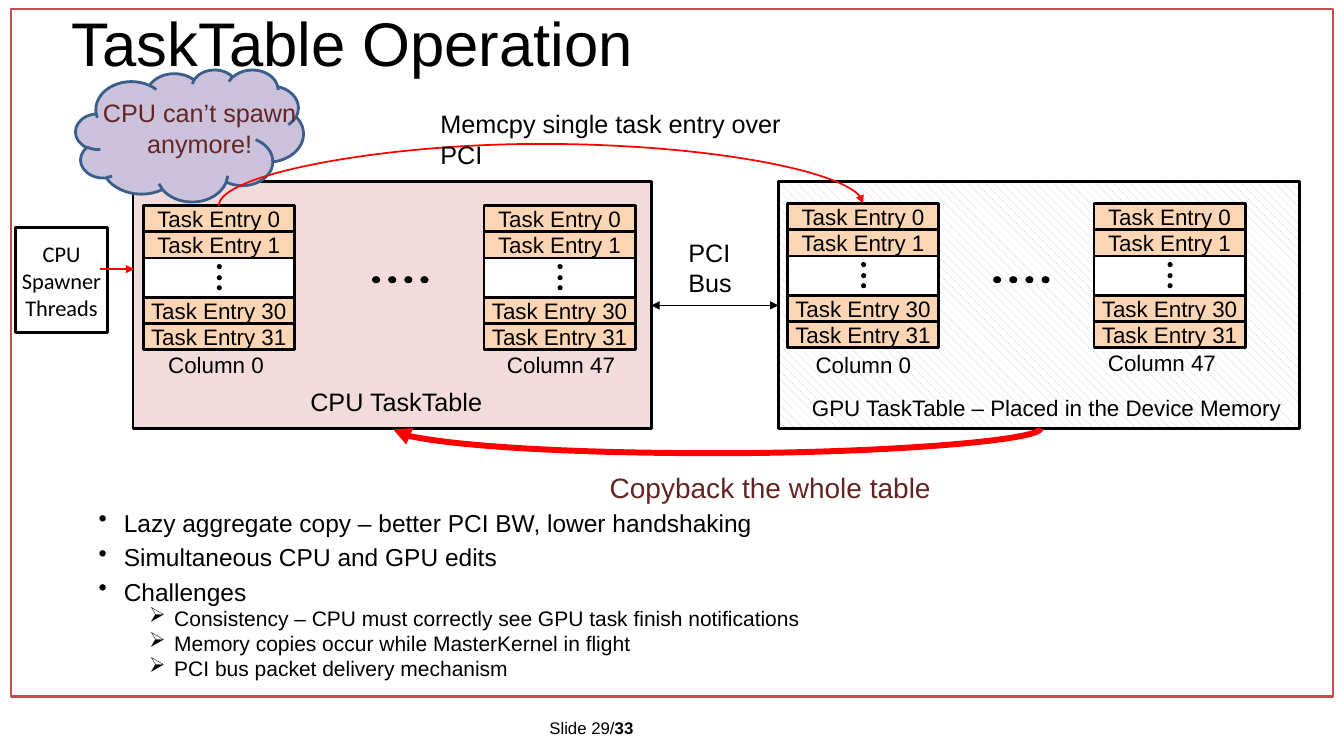
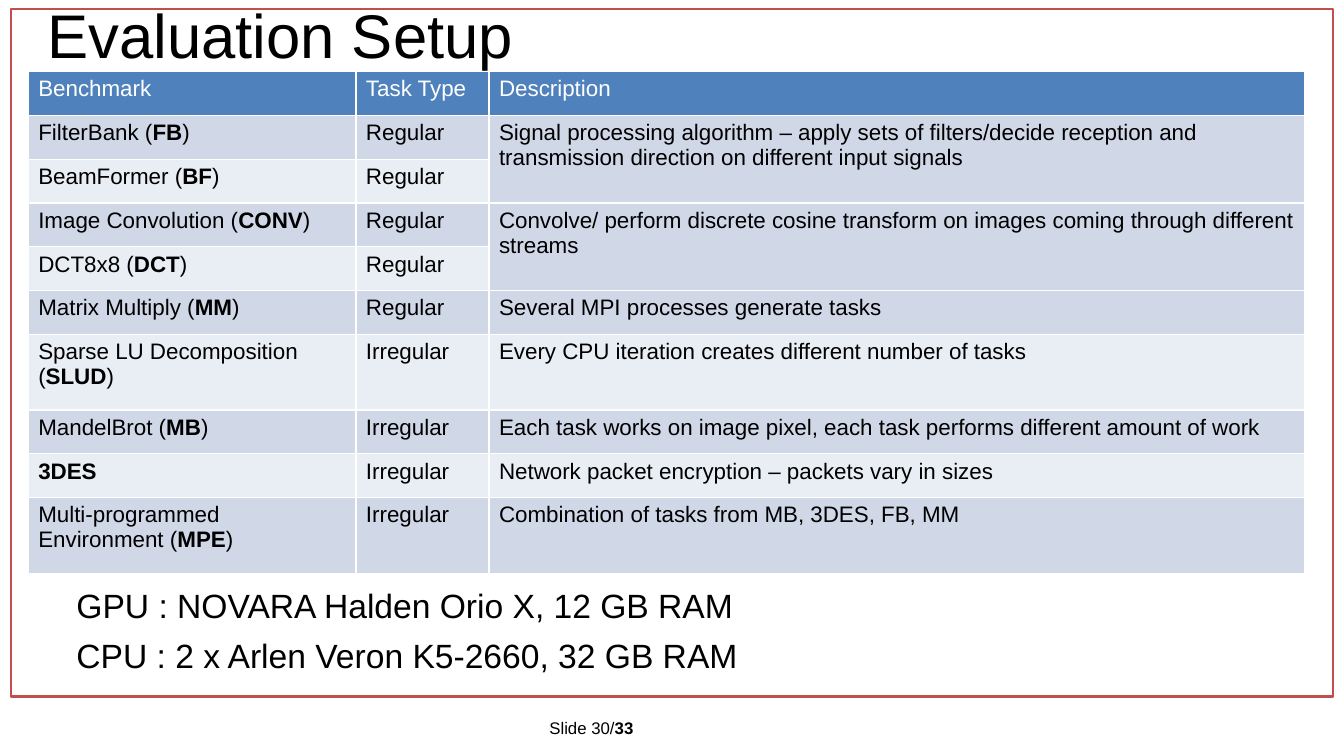
from lxml import etree
from pptx import Presentation
from pptx.dml.color import RGBColor
from pptx.enum.dml import MSO_PATTERN
from pptx.enum.shapes import MSO_CONNECTOR, MSO_SHAPE
from pptx.enum.text import MSO_ANCHOR, PP_ALIGN
from pptx.oxml.ns import qn
from pptx.util import Pt

PX = 9144  # EMU per px, 100 px to the inch
RECT, CLOUD, DOT = MSO_SHAPE.RECTANGLE, MSO_SHAPE.CLOUD, MSO_SHAPE.OVAL
STRAIGHT, CURVE = MSO_CONNECTOR.STRAIGHT, MSO_CONNECTOR.CURVE
CENTER, MIDDLE = PP_ALIGN.CENTER, MSO_ANCHOR.MIDDLE
HATCH = MSO_PATTERN.DASHED_DOWNWARD_DIAGONAL
BLACK, WHITE, RED, MAROON = "000000", "FFFFFF", "FF0000", "632523"
FRAME, PEACH, PINK, LILAC, NAVY = "C0504D", "FCD5B5", "F2DCDB", "CCC1DA", "3A5F8C"
HEADER, BANDS = "4F81BD", ("E9EDF4", "D0D8E8")
rgb = RGBColor.from_string


def box(s, x, y, w, h, kind=None, fill=None, line=None, weight=2):
    """Add a preset shape, or a text box when no kind is given."""
    at = [v * PX for v in (x, y, w, h)]
    if kind is None:
        return s.shapes.add_textbox(*at)
    sp = s.shapes.add_shape(kind, *at)
    sp.shadow.inherit = False
    for part, color in ((sp.fill, fill), (sp.line.fill, line)):
        if color:
            part.solid()
            part.fore_color.rgb = rgb(color)
        else:
            part.background()
    if line:
        sp.line.width = Pt(weight)
    return sp


def write(tf, lines, size, color=BLACK, font="Arial", inset=None, anchor=None, **para):
    """Fill a text frame, one paragraph a line; ** switches bold on and off."""
    tf.word_wrap = True
    if anchor is not None:
        tf.vertical_anchor = anchor
    if inset is not None:
        for side in ("left", "top", "right", "bottom"):
            setattr(tf, f"margin_{side}", inset * PX)
    for n, text in enumerate(lines):
        p = tf.add_paragraph() if n else tf.paragraphs[0]
        for name, value in para.items():
            if n or name != "space_before":
                setattr(p, name, value)
        for i, part in enumerate(text.split("**")):
            if part:
                r = p.add_run()
                r.text = part
                look = {"size": Pt(size), "name": font, "bold": i % 2 == 1}
                for name, value in look.items():
                    setattr(r.font, name, value)
                r.font.color.rgb = rgb(color)


prs = Presentation()
prs.slide_width, prs.slide_height = 1333 * PX, 750 * PX

# Shared frame, footer and title
slides = []
for number, title, x, y, h in ((29, "TaskTable Operation", 71, 3, 86),
                               (30, "Evaluation Setup", 47, -20, 116)):
    s = prs.slides.add_slide(prs.slide_layouts[6])
    box(s, 11, 9, 1311, 682, RECT, line=FRAME, weight=1.5)
    write(box(s, 535, 707, 215, 30).text_frame, [f"Slide {number}/**33**"], 12)
    slides.append((s, title, x, y, h))
operation, setup = (entry[0] for entry in slides)

# TaskTable Operation: panels behind the title
s = operation
box(s, 132, 180, 514, 245, RECT, PINK, BLACK)
box(s, 75, 69, 226, 131, CLOUD, LILAC, NAVY)
device = box(s, 772, 180, 517, 245, RECT, WHITE, BLACK)
device.fill.patterned()
device.fill.pattern = HATCH
device.fill.fore_color.rgb = rgb("B9CDE5")
device.fill.back_color.rgb = rgb(WHITE)

for s, title, x, y, h in slides:
    write(box(s, x, y, 1150, h).text_frame, [title], 44, inset=0, anchor=MIDDLE,
          line_spacing=0.9)

# Task columns
s = operation
ENTRY_W, ENTRY_H, GAP_H = 150, 26, 39
columns = ((142, 204, "Column 0", 157, 343), (480, 204, "Column 47", 493, 343),
           (781, 202, "Column 0", 799, 343), (1085, 202, "Column 47", 1089, 341))
for x, top, label, label_x, label_y in columns:
    y = top
    for entry in (0, 1, None, 30, 31):
        if entry is None:
            box(s, x, y, ENTRY_W, GAP_H, RECT, WHITE, BLACK)
            for dy in (6, 17, 27):
                box(s, x + 73, y + dy, 5, 5, DOT, BLACK)
            y += GAP_H
        else:
            sp = box(s, x, y, ENTRY_W, ENTRY_H, RECT, PEACH, BLACK)
            write(sp.text_frame, [f"Task Entry {entry}"], 16, inset=5, anchor=MIDDLE,
                  alignment=CENTER)
            y += ENTRY_H
    write(box(s, label_x, label_y, 148, 37).text_frame, [label], 16)

for left in (369, 985):
    for i in range(4):
        box(s, left + 16 * i, 274, 8, 7, DOT, BLACK)

threads = box(s, 15, 226, 92, 104, RECT, WHITE, BLACK)
write(threads.text_frame, ["CPU Spawner", "Threads"], 16, font="Calibri", inset=5,
      anchor=MIDDLE, alignment=CENTER)

# Arrows: ends, depth of the bend, colour, weight, arrowheads
arrows = ((646, 303, 772, 303, 0, BLACK, 1.25, ("headEnd", "tailEnd")),
          (99, 267, 133, 267, 0, RED, 1.25, ("tailEnd",)),
          (217, 204, 856, 202, 61, RED, 1.25, ("tailEnd",)),
          (1032, 425, 390, 426, 25, RED, 4.25, ("tailEnd",)))
for x1, y1, x2, y2, bend, color, weight, heads in arrows:
    c = s.shapes.add_connector(CURVE if bend else STRAIGHT,
                               x1 * PX, y1 * PX, x2 * PX, y2 * PX)
    c.line.color.rgb = rgb(color)
    c.line.width = Pt(weight)
    spPr = c._element.spPr
    if bend:
        # A quarter turn makes the connector leave and arrive vertically
        w, h = abs(y2 - y1), abs(x2 - x1)
        c.left, c.top = (x1 + x2 - w) * PX // 2, (y1 + y2 - h) * PX // 2
        c.width, c.height = w * PX, h * PX
        xfrm = spPr.find(qn("a:xfrm"))
        turn = {"rot": "5400000", "flipH": str(int(y2 < y1)), "flipV": str(int(x2 > x1))}
        for name, value in turn.items():
            xfrm.set(name, value)
        geom = spPr.find(qn("a:prstGeom"))
        guides = geom.find(qn("a:avLst"))
        if guides is None:
            guides = etree.SubElement(geom, qn("a:avLst"))
        etree.SubElement(guides, qn("a:gd"), name="adj1", fmla=f"val {bend * 100000 // w}")
    for head in heads:
        etree.SubElement(spPr.find(qn("a:ln")), qn(f"a:{head}"), type="triangle")
    etree.SubElement(spPr, qn("a:effectLst"))

# Labels
labels = ((673, 230, 84, 72, ["PCI", "Bus"], 18, BLACK, None),
          (427, 103, 372, 40, ["Memcpy single task entry over PCI"], 18, BLACK, None),
          (80, 92, 236, 71, ["CPU can’t spawn anymore!"], 18, MAROON, CENTER),
          (555, 462, 418, 44, ["Copyback the whole table"], 20, MAROON, CENTER),
          (133, 378, 520, 40, ["CPU TaskTable"], 18, BLACK, CENTER),
          (778, 386, 520, 37, ["GPU TaskTable – Placed in the Device Memory"], 16, BLACK,
           CENTER))
for x, y, w, h, lines, size, color, align in labels:
    write(box(s, x, y, w, h).text_frame, lines, size, color, alignment=align)

# Bullets: marker, indent, size, space before, lines
levels = (("•", 25, 17.5, 10, ["Lazy aggregate copy – better PCI BW, lower handshaking",
                               "Simultaneous CPU and GPU edits",
                               "Challenges"]),
          ("➢", 75, 15, 5, ["Consistency – CPU must correctly see GPU task finish notifications",
                            "Memory copies occur while MasterKernel in flight",
                            "PCI bus packet delivery mechanism"]))
tf = box(s, 88, 507, 1103, 183).text_frame
write(tf, [line for level in levels for line in level[4]], 17.5, line_spacing=0.7)
paragraphs = iter(tf.paragraphs)
for marker, indent, size, before, lines in levels:
    for line in lines:
        p = next(paragraphs)
        pPr = p._p.get_or_add_pPr()
        pPr.set("marL", str(indent * PX))
        pPr.set("indent", str(-25 * PX))
        etree.SubElement(pPr, qn("a:buChar"), char=marker)
        p.runs[0].font.size = Pt(size)
        if p._p is not tf.paragraphs[0]._p:
            p.space_before = Pt(before)

# Evaluation Setup: an empty description continues the cell above
s = setup
rows = (
    ("Benchmark", "Task Type", "Description"),
    ("FilterBank (**FB**)", "Regular",
     "Signal processing algorithm – apply sets of filters/decide reception and "
     "transmission direction on different input signals"),
    ("BeamFormer (**BF**)", "Regular", ""),
    ("Image Convolution (**CONV**)", "Regular",
     "Convolve/ perform discrete cosine transform on images coming through different streams"),
    ("DCT8x8 (**DCT**)", "Regular", ""),
    ("Matrix Multiply (**MM**)", "Regular", "Several MPI processes generate tasks"),
    ("Sparse LU Decomposition (**SLUD**)", "Irregular",
     "Every CPU iteration creates different number of tasks"),
    ("MandelBrot (**MB**)", "Irregular",
     "Each task works on image pixel, each task performs different amount of work"),
    ("**3DES**", "Irregular", "Network packet encryption – packets vary in sizes"),
    ("Multi-programmed Environment (**MPE**)", "Irregular",
     "Combination of tasks from MB, 3DES, FB, MM"),
)
widths = (325, 132, 809)
heights = [75 if i in (6, 9) else 43.5 for i in range(len(rows))]
table = s.shapes.add_table(len(rows), len(widths), 28 * PX, 71 * PX,
                           sum(widths) * PX, int(sum(heights) * PX)).table
for col, w in zip(table.columns, widths):
    col.width = w * PX
for i, (row, h) in enumerate(zip(rows, heights)):
    table.rows[i].height = int(h * PX)
    for j, text in enumerate(row):
        cell = table.cell(i, j)
        tcPr = cell._tc.get_or_add_tcPr()
        for side in "LRTB":
            ln = etree.SubElement(tcPr, qn(f"a:ln{side}"), w=str(Pt(1)))
            solid = etree.SubElement(ln, qn("a:solidFill"))
            etree.SubElement(solid, qn("a:srgbClr"), val=WHITE)
        cell.fill.solid()
        cell.fill.fore_color.rgb = rgb(BANDS[i % 2] if i else HEADER)
        if text:
            write(cell.text_frame, [text], 16, BLACK if i else WHITE)
        else:
            table.cell(i - 1, j).merge(cell)

write(box(s, 66, 580, 1150, 110).text_frame,
      ["GPU : NOVARA Halden Orio X, 12 GB RAM", "CPU : 2 x Arlen Veron K5-2660, 32 GB RAM"],
      24, line_spacing=0.9, space_before=Pt(10))

prs.save("out.pptx")
